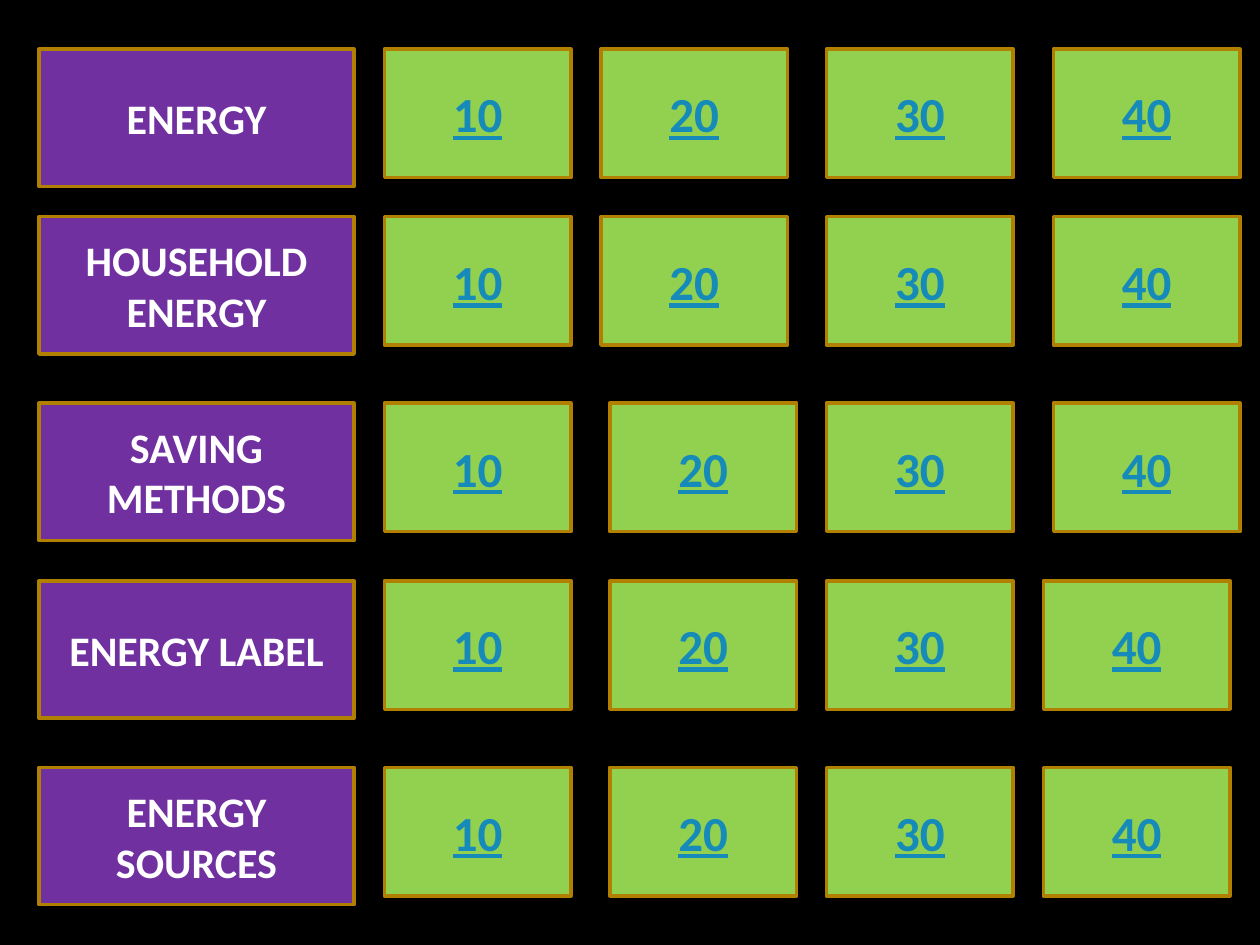
import pptx
import pptx.util
import pptx.dml.color
import pptx.enum.shapes
import pptx.enum.text

Pt = pptx.util.Pt

CATEGORY_SIZE = (180, 78.5)
VALUE_SIZE = (106.6, 73.4)
VALUES = ("10", "20", "30", "40")

# Offsets of the value buttons from the left edge of their row
WIDE_LAST = (197.3, 326.2, 450, 579.6)
CLOSE_SECOND = (197.3, 321.1, 450, 579.6)
CLOSE_LAST = (197.3, 326.2, 450, 573.9)

# Category, top, value offsets
ROWS = (
    ("ENERGY", 28.1, CLOSE_SECOND),
    ("HOUSEHOLD ENERGY", 123.8, CLOSE_SECOND),
    ("SAVING\nMETHODS", 230.4, WIDE_LAST),
    ("ENERGY LABEL", 331.9, CLOSE_LAST),
    ("ENERGY SOURCES", 438.5, CLOSE_LAST),
)


def color(hex_string):
    return pptx.dml.color.RGBColor.from_string(hex_string)


def add_button(s, left, top, size, text, fill, font_color, font_size, underline=None):
    sp = s.shapes.add_shape(
        pptx.enum.shapes.MSO_SHAPE.ACTION_BUTTON_CUSTOM,
        Pt(left), Pt(top), Pt(size[0]), Pt(size[1]))
    sp.shadow.inherit = False
    sp.fill.solid()
    sp.fill.fore_color.rgb = color(fill)
    sp.line.color.rgb = color("B28000")
    sp.line.width = Pt(2)
    tf = sp.text_frame
    tf.word_wrap = True
    tf.vertical_anchor = pptx.enum.text.MSO_ANCHOR.MIDDLE
    tf.text = text
    for p in tf.paragraphs:
        p.alignment = pptx.enum.text.PP_ALIGN.CENTER
        for r in p.runs:
            r.font.name = "Calibri"
            r.font.size = Pt(font_size)
            r.font.bold = True
            r.font.underline = underline
            r.font.color.rgb = color(font_color)


def add_row(s, left, top, category, offsets):
    # Category
    add_button(s, left, top, CATEGORY_SIZE, category, "7030A0", "FFFFFF", 24)
    # Point values
    for value, offset in zip(VALUES, offsets):
        add_button(s, left + offset, top, VALUE_SIZE, value,
                   "92D050", "168BBA", 28, underline=True)


def main():
    prs = pptx.Presentation()
    prs.slide_width, prs.slide_height = Pt(720), Pt(540)
    s = prs.slides.add_slide(prs.slide_layouts[6])
    s.background.fill.solid()
    s.background.fill.fore_color.rgb = color("000000")
    # Game board
    for category, top, offsets in ROWS:
        add_row(s, 22.3, top, category, offsets)
    prs.save("out.pptx")


if __name__ == "__main__":
    main()
